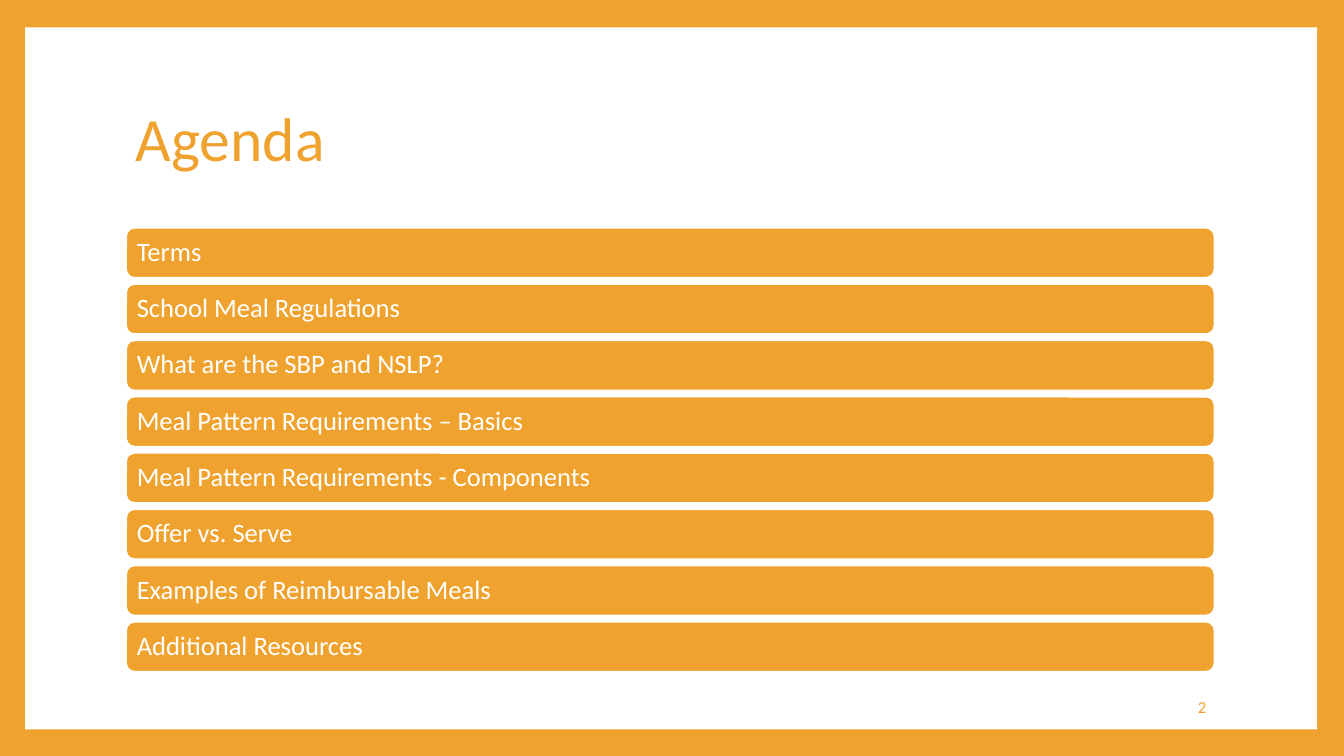
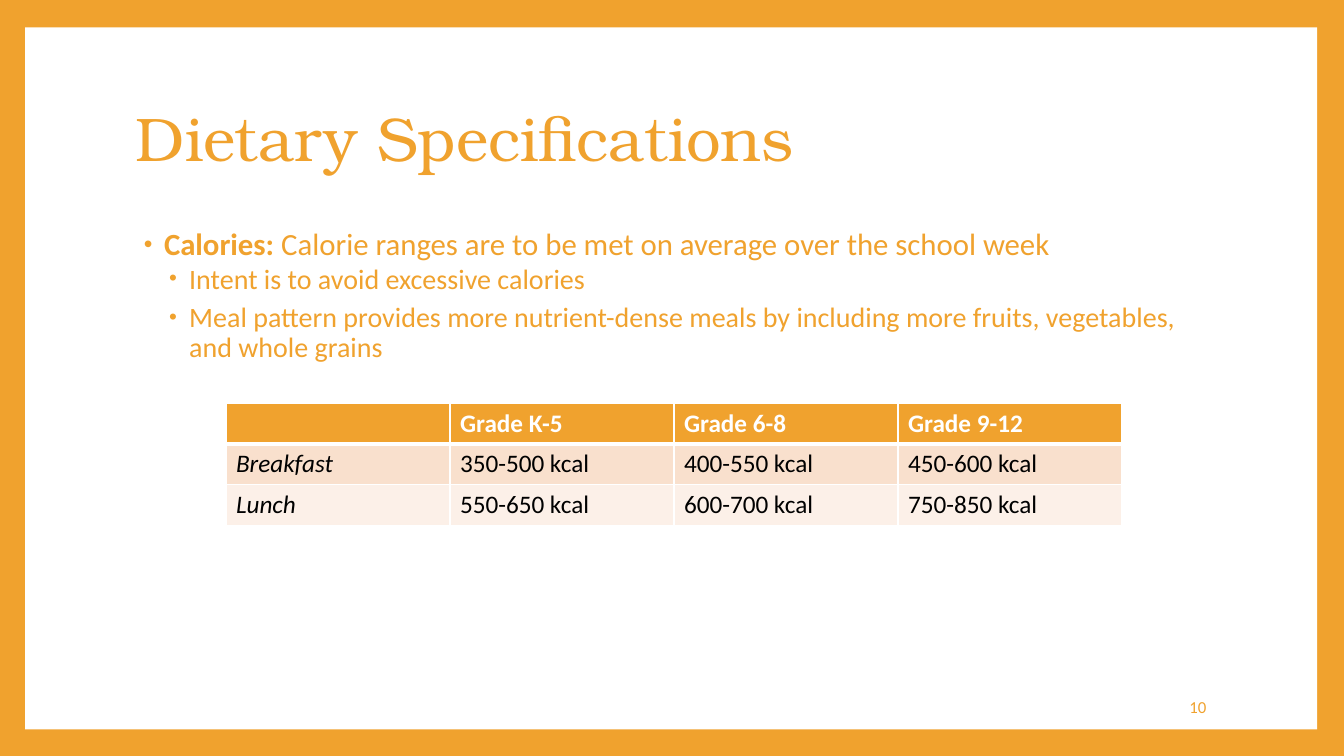
"""Build the agenda and dietary specification slides of a school meals deck."""
from dataclasses import dataclass

from lxml.etree import SubElement
from pptx import Presentation
from pptx.dml.color import RGBColor
from pptx.enum.shapes import MSO_SHAPE
from pptx.enum.text import MSO_ANCHOR, PP_ALIGN
from pptx.oxml.ns import qn
from pptx.presentation import Presentation as Deck
from pptx.shapes.autoshape import Shape
from pptx.slide import Slide
from pptx.table import _Cell
from pptx.text.text import TextFrame, _Paragraph
from pptx.util import Length, Pt

COLUMNS, ROWS = 160, 90


@dataclass(frozen=True)
class Theme:
    orange: str = "F0A22E"
    white: str = "FFFFFF"
    black: str = "000000"
    stripes: tuple[str, str] = ("F9E0CD", "FCF0E8")
    body_face: str = "Calibri"
    serif_face: str = "TeX Gyre Bonum"
    title: int = 44
    lead: int = 22
    detail: int = 20
    bar: int = 19
    table: int = 18
    number: int = 12
    line_spacing: float = 0.9


@dataclass(frozen=True)
class Area:
    column: float
    row: float
    columns: float
    rows: float

    def emu(self) -> tuple[Length, ...]:
        return tuple(map(grid, (self.column, self.row, self.columns, self.rows)))


@dataclass(frozen=True)
class Point:
    text: str
    lead_in: str = ""
    level: int = 0


THEME = Theme()
FRAME = Area(3, 3.25, 153.8, 83.6)
TITLE = Area(15, 8, 129.6, 17.75)
NUMBER = Area(122.4, 81.7, 22.4, 4.8)
FIRST_BAR = Area(15, 27.1, 129.6, 6)
BAR_PITCH = 6.7
POINTS = Area(15.35, 26.65, 129.6, 58)
CALORIES = Area(26.9, 48, 106.68, 14.55)

AGENDA = (
    "Terms",
    "School Meal Regulations",
    "What are the SBP and NSLP?",
    "Meal Pattern Requirements – Basics",
    "Meal Pattern Requirements - Components",
    "Offer vs. Serve",
    "Examples of Reimbursable Meals",
    "Additional Resources",
)
SPECIFICATIONS = (
    Point("Calorie ranges are to be met on average over the school week", "Calories: "),
    Point("Intent is to avoid excessive calories", level=1),
    Point("Meal pattern provides more nutrient-dense meals by including more "
          "fruits, vegetables, and whole grains", level=1),
)
CALORIE_RANGES = (
    ("", "Grade K-5", "Grade 6-8", "Grade 9-12"),
    ("Breakfast", "350-500 kcal", "400-550 kcal", "450-600 kcal"),
    ("Lunch", "550-650 kcal", "600-700 kcal", "750-850 kcal"),
)


def grid(cells: float) -> Length:
    return Pt(6 * cells)


def rgb(color: str) -> RGBColor:
    return RGBColor.from_string(color)


def style(paragraph: _Paragraph, size: int, color: str, face: str = THEME.body_face,
          bold: bool = False, italic: bool = False) -> None:
    font = paragraph.font
    font.name, font.size, font.bold, font.italic = face, Pt(size), bold, italic
    font.color.rgb = rgb(color)


def add_block(slide: Slide, area: Area, outline: MSO_SHAPE) -> Shape:
    block = slide.shapes.add_shape(outline, *area.emu())
    block.shadow.inherit = False
    block.fill.solid()
    block.line.fill.background()
    return block


def add_text(slide: Slide, area: Area, anchor: MSO_ANCHOR = MSO_ANCHOR.MIDDLE) -> TextFrame:
    frame = slide.shapes.add_textbox(*area.emu()).text_frame
    frame.word_wrap = True
    frame.vertical_anchor = anchor
    return frame


def add_slide(deck: Deck, title: str, number: int, title_face: str) -> Slide:
    slide = deck.slides.add_slide(deck.slide_layouts[6])
    slide.background.fill.solid()
    slide.background.fill.fore_color.rgb = rgb(THEME.orange)
    add_block(slide, FRAME, MSO_SHAPE.RECTANGLE).fill.fore_color.rgb = rgb(THEME.white)

    heading = add_text(slide, TITLE).paragraphs[0]
    heading.text = title
    heading.line_spacing = THEME.line_spacing
    style(heading, THEME.title, THEME.orange, title_face)

    page = add_text(slide, NUMBER).paragraphs[0]
    page.text = str(number)
    page.alignment = PP_ALIGN.RIGHT
    style(page, THEME.number, THEME.orange)
    return slide


def add_bar(slide: Slide, position: int, topic: str) -> None:
    row = FIRST_BAR.row + position * BAR_PITCH
    area = Area(FIRST_BAR.column, row, FIRST_BAR.columns, FIRST_BAR.rows)
    bar = add_block(slide, area, MSO_SHAPE.ROUNDED_RECTANGLE)
    bar.fill.fore_color.rgb = rgb(THEME.orange)
    bar.line.color.rgb = rgb(THEME.white)
    bar.line.width = Pt(1.5)
    frame = bar.text_frame
    frame.margin_left = frame.margin_right = grid(1)
    frame.vertical_anchor = MSO_ANCHOR.MIDDLE
    label = frame.paragraphs[0]
    label.text = topic
    label.alignment = PP_ALIGN.LEFT
    label.line_spacing = THEME.line_spacing
    style(label, THEME.bar, THEME.white)


def add_bullet(paragraph: _Paragraph, level: int) -> None:
    properties = paragraph._p.get_or_add_pPr()
    properties.set("marL", str(grid(3 * (level + 1))))
    properties.set("indent", str(-grid(2.4)))
    color = SubElement(properties, qn("a:buClr"))
    SubElement(color, qn("a:srgbClr"), val=THEME.orange)
    SubElement(properties, qn("a:buSzPct"), val="80000")
    SubElement(properties, qn("a:buFont"), typeface="Arial")
    SubElement(properties, qn("a:buChar"), char="•")


def add_points(slide: Slide, points: tuple[Point, ...]) -> None:
    frame = add_text(slide, POINTS, MSO_ANCHOR.TOP)
    for index, point in enumerate(points):
        paragraph = frame.add_paragraph() if index else frame.paragraphs[0]
        paragraph.level = point.level
        add_bullet(paragraph, point.level)
        style(paragraph, THEME.detail if point.level else THEME.lead, THEME.orange)
        paragraph.line_spacing = THEME.line_spacing
        paragraph.space_before = Pt(2 if point.level else 14)
        paragraph.space_after = Pt(4 if point.level else 0)
        if point.lead_in:
            lead_in = paragraph.add_run()
            lead_in.text = point.lead_in
            lead_in.font.bold = True
        paragraph.add_run().text = point.text


def set_borders(cell: _Cell, top: int, bottom: int) -> None:
    properties = cell._tc.get_or_add_tcPr()
    for side, width in (("L", 1), ("R", 1), ("T", top), ("B", bottom)):
        border = SubElement(properties, qn(f"a:ln{side}"), w=str(Pt(width)))
        fill = SubElement(border, qn("a:solidFill"))
        SubElement(fill, qn("a:srgbClr"), val=THEME.white)


def add_ranges(slide: Slide, ranges: tuple[tuple[str, ...], ...]) -> None:
    table = slide.shapes.add_table(len(ranges), len(ranges[0]), *CALORIES.emu()).table
    for row, values in enumerate(ranges):
        header = row == 0
        for column, value in enumerate(values):
            cell = table.cell(row, column)
            set_borders(cell, top=3 if row == 1 else 1, bottom=3 if header else 1)
            cell.fill.solid()
            cell.fill.fore_color.rgb = rgb(THEME.orange if header else THEME.stripes[row - 1])
            label = cell.text_frame.paragraphs[0]
            label.text = value
            style(label, THEME.table, THEME.white if header else THEME.black,
                  bold=header, italic=not header and column == 0)


def main() -> None:
    deck = Presentation()
    deck.slide_width, deck.slide_height = grid(COLUMNS), grid(ROWS)

    agenda = add_slide(deck, "Agenda", 2, THEME.body_face)
    for position, topic in enumerate(AGENDA):
        add_bar(agenda, position, topic)

    dietary = add_slide(deck, "Dietary Specifications", 10, THEME.serif_face)
    add_points(dietary, SPECIFICATIONS)
    add_ranges(dietary, CALORIE_RANGES)
    deck.save("out.pptx")


if __name__ == "__main__":
    main()
